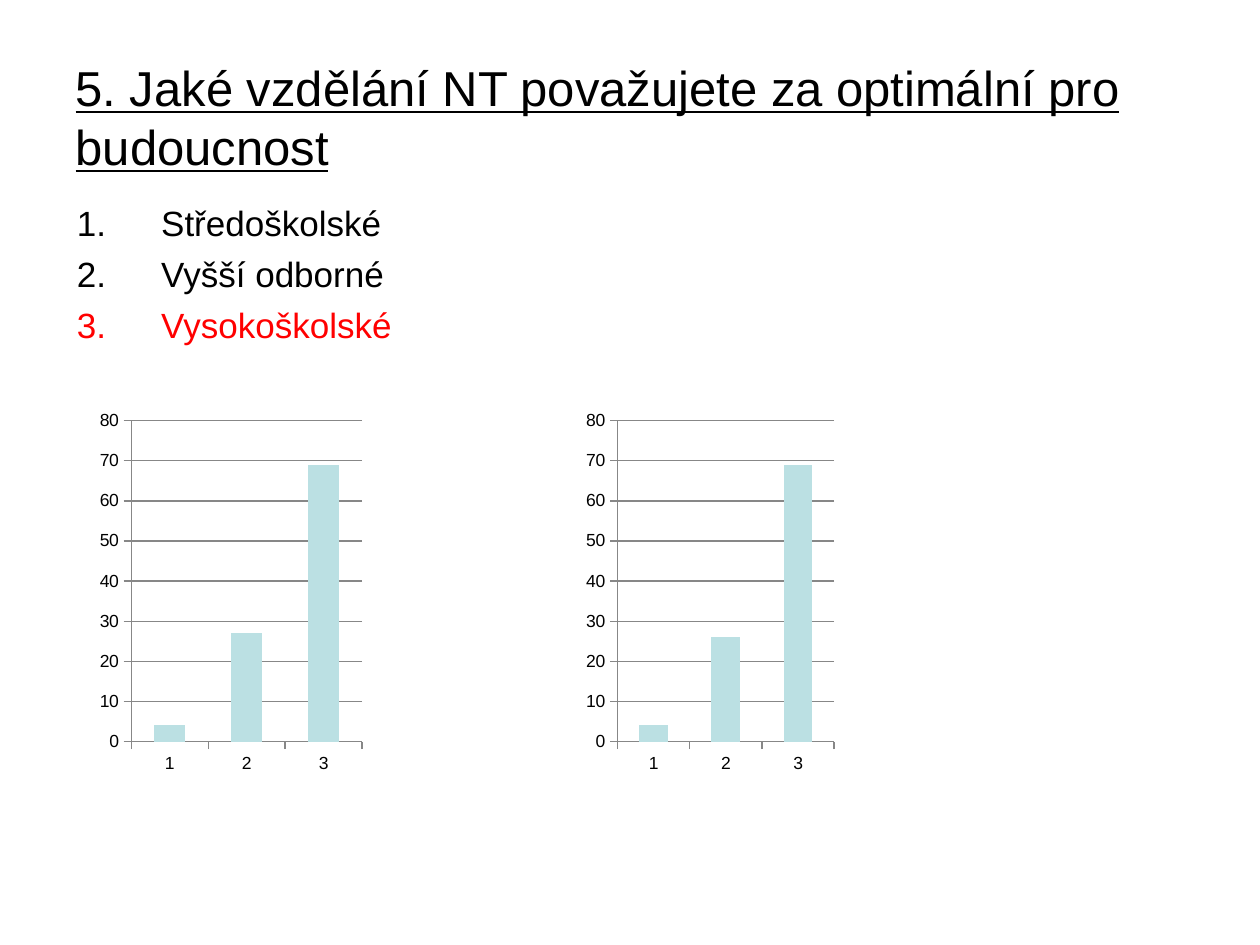
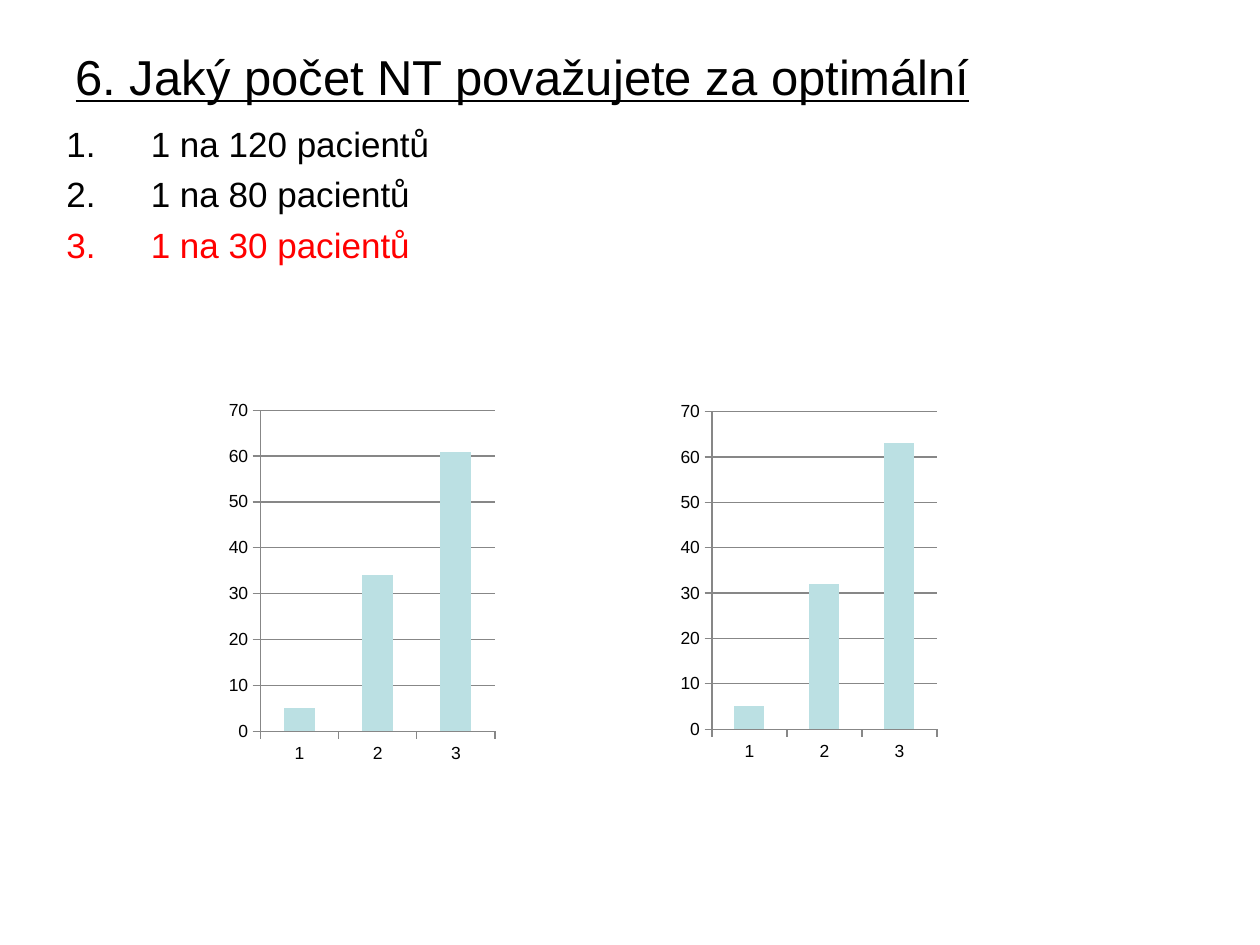
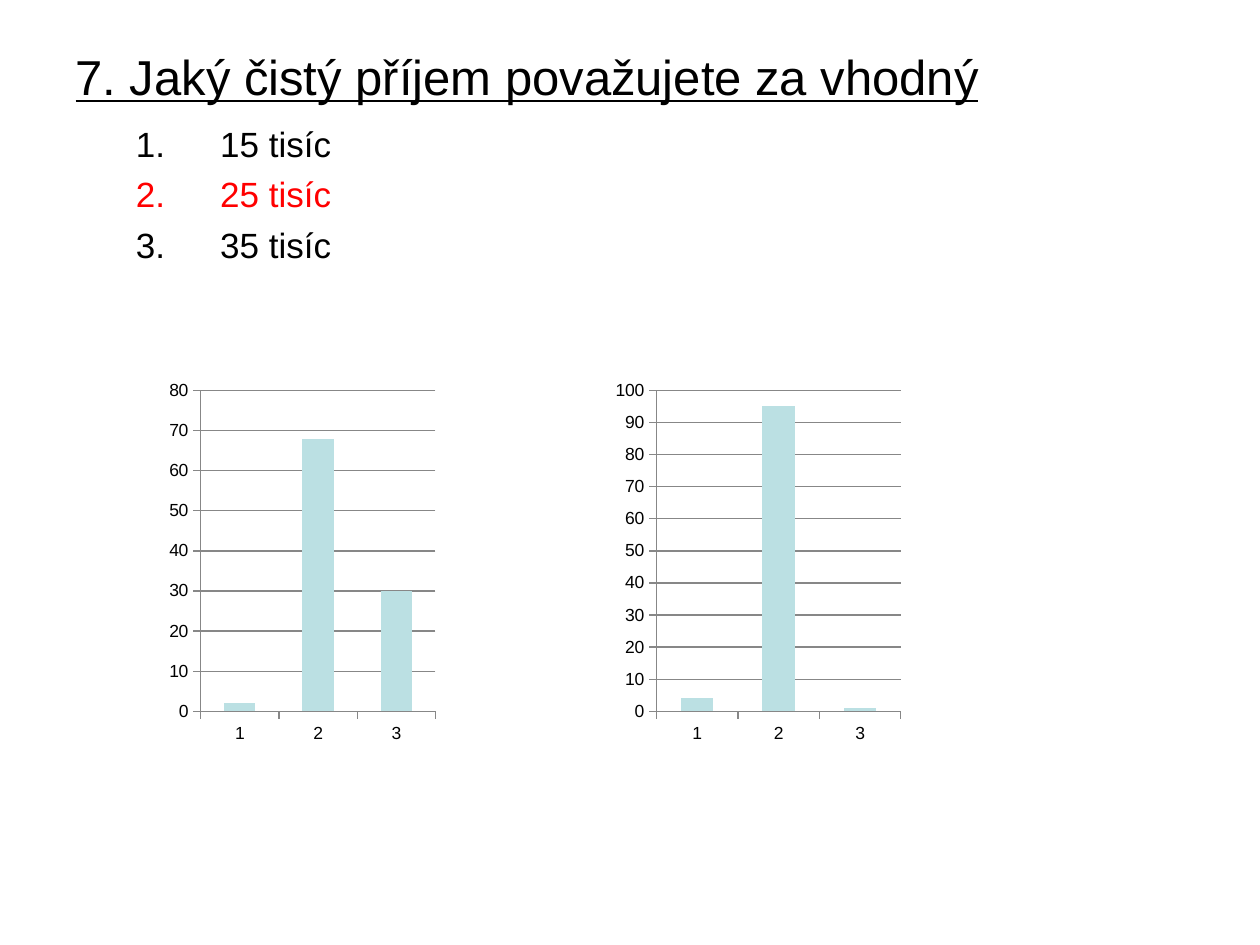
from dataclasses import dataclass

from lxml.etree import SubElement
from pptx import Presentation
from pptx.chart.data import CategoryChartData
from pptx.dml.color import RGBColor
from pptx.enum.chart import XL_CHART_TYPE, XL_TICK_MARK
from pptx.enum.text import MSO_ANCHOR, MSO_AUTO_SIZE, PP_ALIGN
from pptx.oxml import parse_xml
from pptx.oxml.ns import nsdecls, qn
from pptx.slide import Slide
from pptx.util import Cm, Pt


# Shared look
@dataclass(frozen=True)
class Theme:
    font: str = "Arial"
    ink: RGBColor = RGBColor(0, 0, 0)
    mark: RGBColor = RGBColor(0xFF, 0, 0)
    bar: RGBColor = RGBColor(0xBB, 0xE0, 0xE3)
    grid: RGBColor = RGBColor(0x87, 0x87, 0x87)
    title: Pt = Pt(28)
    body: Pt = Pt(20)
    label: Pt = Pt(10)
    gap: Pt = Pt(5)
    indent: Cm = Cm(1.7)


LOOK = Theme()


# Content, with lengths in centimetres
@dataclass(frozen=True)
class Bars:
    left: float
    width: float
    vals: tuple[int, ...]
    top_val: int
    plot: tuple[float, ...] = ()  # inner x, y, width, height


@dataclass(frozen=True)
class Poll:
    title: str
    tall: float
    left: float
    top: float
    items: tuple[str, ...]
    best: int
    row: float
    charts: tuple[Bars, ...]


POLLS = (
    Poll("5. Jaké vzdělání NT považujete za optimální pro budoucnost", 3.18,
         1.3, 3.94, ("Středoškolské", "Vyšší odborné", "Vysokoškolské"), 2, 8.13,
         (Bars(1.9, 5.51, (4, 27, 69), 80), Bars(11.71, 5.21, (4, 26, 69), 80))),
    Poll("6. Jaký počet NT považujete za optimální", 1.55,
         1.09, 2.34, ("1 na 120 pacientů", "1 na 80 pacientů", "1 na 30 pacientů"), 2, 7.92,
         (Bars(13.49, 5.41, (5, 32, 63), 70, (0.16, 0.05, 0.84, 0.84)),
          Bars(4.5, 5.59, (5, 34, 61), 70))),
    Poll("7. Jaký čistý příjem považujete za vhodný", 1.55,
         2.49, 2.34, ("15 tisíc", "25 tisíc", "35 tisíc"), 1, 7.52,
         (Bars(3.3, 5.59, (2, 68, 30), 80), Bars(12.29, 5.99, (4, 95, 1), 100))),
)


def style(font, size: Pt, color: RGBColor) -> None:
    font.name, font.size = LOOK.font, size
    font.color.rgb = color


def add_title(slide: Slide, poll: Poll) -> None:
    box = slide.shapes.title
    box.left, box.top, box.width, box.height = Cm(1.27), Cm(0.76), Cm(22.86), Cm(poll.tall)
    frame = box.text_frame
    frame.text = poll.title
    frame.auto_size = MSO_AUTO_SIZE.NONE
    frame.vertical_anchor = MSO_ANCHOR.MIDDLE
    para = frame.paragraphs[0]
    para.alignment = PP_ALIGN.LEFT
    style(para.font, LOOK.title, LOOK.ink)
    para.font.underline = True


def add_list(slide: Slide, poll: Poll) -> None:
    box = slide.shapes.add_textbox(Cm(poll.left), Cm(poll.top), Cm(11.43), Cm(3.3))
    frame = box.text_frame
    frame.word_wrap = True
    frame.text = "\n".join(poll.items)
    for i, para in enumerate(frame.paragraphs):
        style(para.font, LOOK.body, LOOK.mark if i == poll.best else LOOK.ink)
        para.space_before = LOOK.gap
        # Hanging automatic number, placed ahead of the paragraph's font
        props = para._p.get_or_add_pPr()
        props.set("marL", str(LOOK.indent))
        props.set("indent", str(-LOOK.indent))
        num = SubElement(props, qn("a:buAutoNum"), type="arabicPeriod")
        props.find(qn("a:defRPr")).addprevious(num)


def set_plot(chart, plot: tuple[float, ...]) -> None:
    area = chart._chartSpace.chart.plotArea
    for old in area.findall(qn("c:layout")):
        area.remove(old)
    modes = '<c:layoutTarget val="inner"/><c:xMode val="edge"/><c:yMode val="edge"/>'
    sizes = "".join(f'<c:{tag} val="{val}"/>' for tag, val in zip("xywh", plot))
    area.insert(0, parse_xml(
        f'<c:layout {nsdecls("c")}><c:manualLayout>{modes}{sizes}</c:manualLayout></c:layout>'))


def add_bars(slide: Slide, bars: Bars, row: float) -> None:
    data = CategoryChartData()
    data.categories = [str(i + 1) for i in range(len(bars.vals))]
    data.add_series("Series 1", bars.vals)
    chart = slide.shapes.add_chart(XL_CHART_TYPE.COLUMN_CLUSTERED, Cm(bars.left), Cm(row),
                                   Cm(bars.width), Cm(7.62), data).chart
    chart.has_legend = chart.has_title = False
    style(chart.font, LOOK.label, LOOK.ink)
    # Bars
    plot = chart.plots[0]
    plot.gap_width, plot.vary_by_categories = 150, False
    fill = plot.series[0].format.fill
    fill.solid()
    fill.fore_color.rgb = LOOK.bar
    # Axes and grid
    cat, val = chart.category_axis, chart.value_axis
    val.minimum_scale, val.maximum_scale, val.major_unit = 0, bars.top_val, 10
    val.has_major_gridlines = True
    for axis in (cat, val):
        axis.major_tick_mark = XL_TICK_MARK.OUTSIDE
    for part in (cat, val, val.major_gridlines):
        part.format.line.color.rgb = LOOK.grid
        part.format.line.width = Pt(0.75)
    if bars.plot:
        set_plot(chart, bars.plot)


def main() -> None:
    deck = Presentation()
    deck.slide_width, deck.slide_height = Cm(25.4), Cm(19.05)
    for poll in POLLS:
        slide = deck.slides.add_slide(deck.slide_layouts[5])
        add_title(slide, poll)
        add_list(slide, poll)
        for bars in poll.charts:
            add_bars(slide, bars, poll.row)
    deck.save("out.pptx")


if __name__ == "__main__":
    main()
